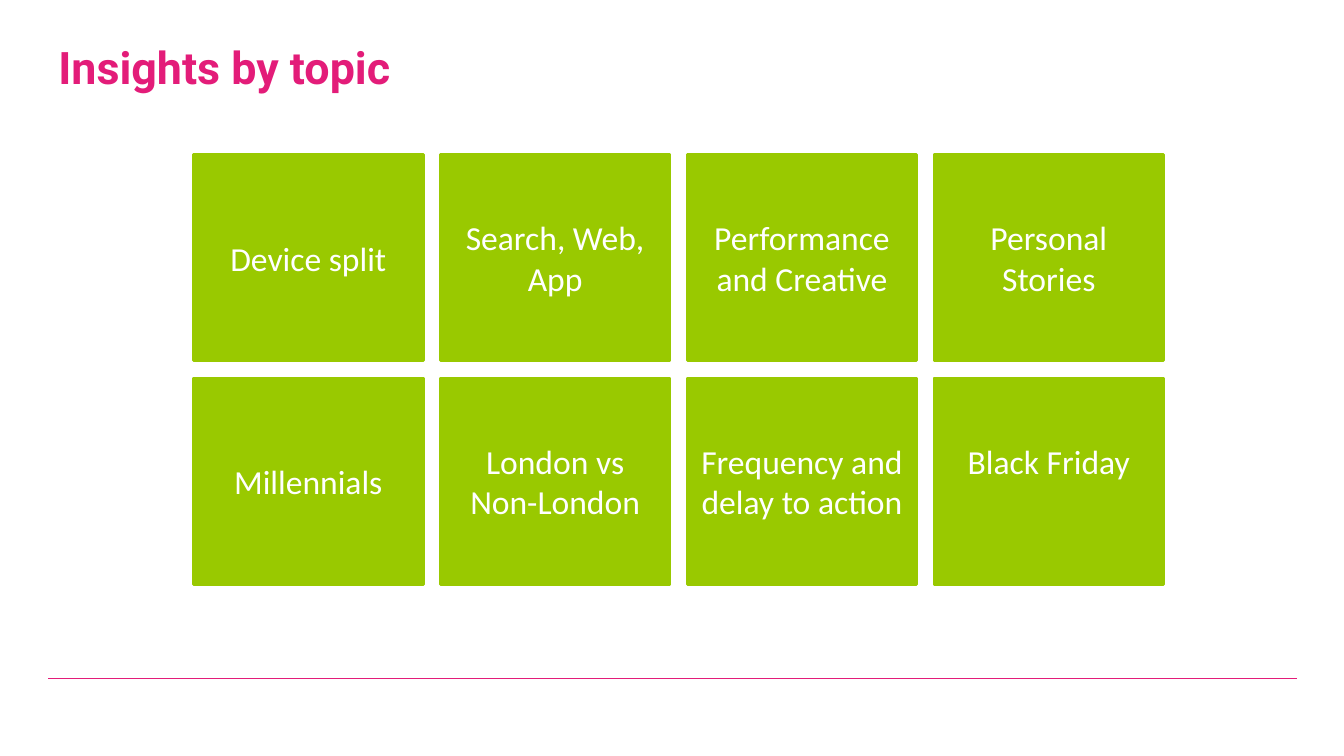
from pptx import Presentation
from pptx.dml.color import RGBColor
from pptx.enum.shapes import MSO_CONNECTOR, MSO_SHAPE
from pptx.enum.text import MSO_ANCHOR, MSO_AUTO_SIZE, PP_ALIGN
from pptx.oxml.ns import qn
from pptx.util import Inches, Pt
from lxml.etree import SubElement

COLORS = {"pink": "E31C79", "green": "99C900", "white": "FFFFFF"}
TOPICS = [
    ["Device split", "Search, Web, App", "Performance and Creative", "Personal Stories"],
    ["Millennials", "London vs Non-London", "Frequency and delay to action", "Black Friday"],
]
LEFT, TOP = 1.92, 1.53
TILE_W, TILE_H = 2.28, 2.05
STEP_X, STEP_Y = 2.45, 2.22
RAISED = {"Black Friday": 0.45}


def color(name):
    return RGBColor.from_string(COLORS[name])


def write(tf, text, font="Calibri", size=24, fill="white", bold=False,
          align=PP_ALIGN.CENTER, anchor=MSO_ANCHOR.MIDDLE, spacing=1.0):
    tf.word_wrap = True
    tf.auto_size = MSO_AUTO_SIZE.NONE
    tf.vertical_anchor = anchor
    p = tf.paragraphs[0]
    p.alignment = align
    p.line_spacing = spacing
    p.space_before = Pt(0)
    r = p.add_run()
    r.text = text
    r.font.name = font
    r.font.size = Pt(size)
    r.font.bold = bold
    r.font.color.rgb = color(fill)


class TopicSlide:
    def __init__(self, prs):
        self.s = prs.slides.add_slide(prs.slide_layouts[5])

    def title(self, text):
        sp = self.s.shapes.title
        sp.left, sp.top = Inches(0.48), Inches(0.4)
        sp.width, sp.height = Inches(12.39), Inches(1.1)
        write(sp.text_frame, text, font="Roboto", size=32, fill="pink", bold=True,
              align=PP_ALIGN.LEFT, anchor=MSO_ANCHOR.TOP, spacing=0.9)

    def rule(self, x1, x2, y):
        line = self.s.shapes.add_connector(
            MSO_CONNECTOR.STRAIGHT, Inches(x1), Inches(y), Inches(x2), Inches(y))
        line.line.color.rgb = color("pink")
        line.line.width = Pt(1)
        SubElement(line.element.spPr, qn("a:effectLst"))

    def tile(self, text, x, y):
        sp = self.s.shapes.add_shape(
            MSO_SHAPE.RECTANGLE, Inches(x), Inches(y), Inches(TILE_W), Inches(TILE_H))
        sp.shadow.inherit = False
        sp.fill.solid()
        sp.fill.fore_color.rgb = color("green")
        sp.line.color.rgb = color("green")
        sp.line.width = Pt(2)
        sp.text_frame.margin_bottom = Inches(RAISED.get(text, 0.05))
        write(sp.text_frame, text)


def main():
    prs = Presentation()
    prs.slide_width, prs.slide_height = Inches(13.34), Inches(7.5)
    slide = TopicSlide(prs)
    slide.rule(0.48, 12.87, 6.73)
    slide.title("Insights by topic")
    for row, topics in enumerate(TOPICS):
        for col, topic in enumerate(topics):
            slide.tile(topic, LEFT + col * STEP_X, TOP + row * STEP_Y)
    prs.save("out.pptx")


if __name__ == "__main__":
    main()
